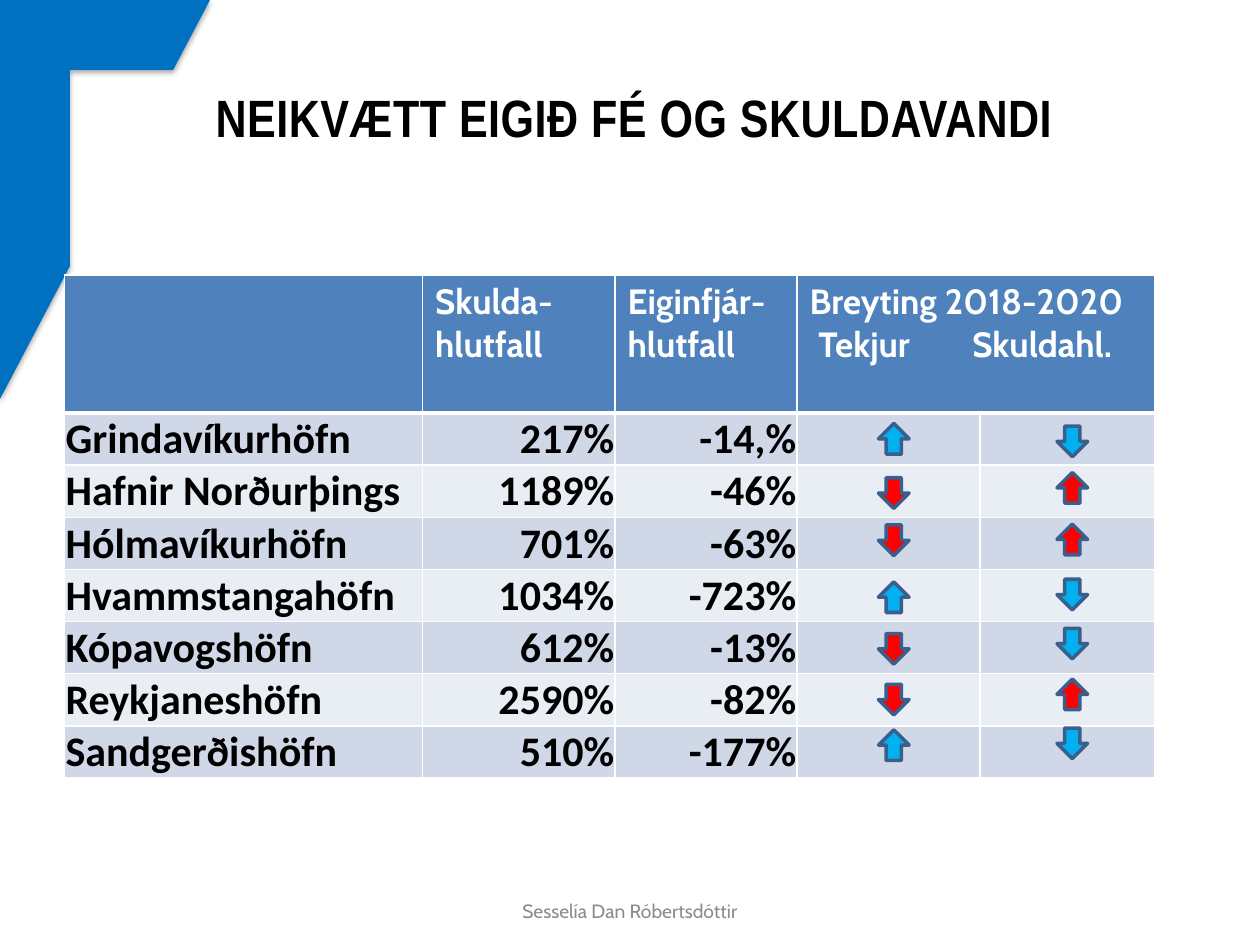
"""Build the slide on harbours with negative equity and debt problems."""
from lxml import etree
from pptx import Presentation
from pptx.dml.color import RGBColor
from pptx.enum import shapes, text
from pptx.oxml import ns
from pptx.util import Pt

TITLE = "NEIKVÆTT EIGIÐ FÉ OG SKULDAVANDI"
AUTHOR = "Sesselía Dan Róbertsdóttir"
HEADINGS = ["", "Skulda-hlutfall", "Eiginfjár-\nhlutfall",
            "Breyting 2018-2020\n\tTekjur\tSkuldahl.", ""]
HARBOURS = [
    ("Grindavíkurhöfn", "217%", "-14,%", ("up", 242), ("down", 243.5)),
    ("Hafnir Norðurþings", "1189%", "-46%", ("down", 273), ("up", 270)),
    ("Hólmavíkurhöfn", "701%", "-63%", ("down", 300), ("up", 299.5)),
    ("Hvammstangahöfn", "1034%", "-723%", ("up", 332.5), ("down", 331)),
    ("Kópavogshöfn", "612%", "-13%", ("down", 362), ("down", 359)),
    ("Reykjaneshöfn", "2590%", "-82%", ("down", 391), ("up", 388)),
    ("Sandgerðishöfn", "510%", "-177%", ("up", 417), ("down", 416)),
]
GOOD_DIRECTIONS = ["up", "down"]
ARROW_LEFTS = [502, 604]
ARROW_SIZE = 17.5
ARROWS = {"up": shapes.MSO_SHAPE.UP_ARROW, "down": shapes.MSO_SHAPE.DOWN_ARROW}
COLUMN_WIDTHS = [204.5, 110, 104, 104.5, 100]
HEADER_HEIGHT, ROW_HEIGHT = 79, 29.75
BANDS = ["D0D8E8", "E9EDF4"]


def rgb(code):
    return RGBColor.from_string(code)


def add_xml(parent, markup):
    parent.append(etree.fromstring(markup.replace(" ", f" {ns.nsdecls('a')} ", 1)))


def set_font(paragraph, name, size, color, bold=False):
    font = paragraph.font
    font.name, font.size, font.bold = name, Pt(size), bold
    font.color.rgb = rgb(color)


def paint(shape, color):
    shape.fill.solid()
    shape.fill.fore_color.rgb = rgb(color)


def style_cell(cell, color, top=1, bottom=1):
    borders = {"lnL": 1, "lnR": 1, "lnT": top, "lnB": bottom}
    for side, width in borders.items():
        add_xml(cell._tc.get_or_add_tcPr(),
                f'<a:{side} w="{Pt(width)}"><a:solidFill><a:srgbClr val="FFFFFF"/>'
                f'</a:solidFill></a:{side}>')
    paint(cell, color)


def add_corner(slide):
    corner = slide.shapes.add_shape(shapes.MSO_SHAPE.HALF_FRAME, 0, 0, Pt(120), Pt(228))
    paint(corner, "0070C0")
    corner.line.fill.background()
    add_xml(corner._element.spPr,
            f'<a:effectLst ><a:outerShdw blurRad="{Pt(3.1)}" dist="{Pt(1.8)}" dir="5400000" '
            'rotWithShape="0"><a:srgbClr val="000000"><a:alpha val="35000"/></a:srgbClr>'
            '</a:outerShdw></a:effectLst>')


def place_title(slide):
    title = slide.shapes.title
    title.left, title.top, title.width, title.height = Pt(116), Pt(21.5), Pt(581), Pt(90)
    frame = title.text_frame
    frame.text = TITLE
    frame.auto_size = text.MSO_AUTO_SIZE.NONE
    frame.vertical_anchor = text.MSO_ANCHOR.MIDDLE
    heading = frame.paragraphs[0]
    heading.alignment = text.PP_ALIGN.LEFT
    set_font(heading, "Arial Narrow", 30, "000000", True)
    heading.runs[0].font._element.set("spc", "30")


def add_harbour_table(slide):
    table = slide.shapes.add_table(
        len(HARBOURS) + 1, len(COLUMN_WIDTHS), Pt(37), Pt(157), Pt(sum(COLUMN_WIDTHS)),
        Pt(HEADER_HEIGHT + ROW_HEIGHT * len(HARBOURS))).table
    for column, width in zip(table.columns, COLUMN_WIDTHS):
        column.width = Pt(width)
    for row in table.rows:
        row.height = Pt(ROW_HEIGHT)
    table.rows[0].height = Pt(HEADER_HEIGHT)
    table.cell(0, 3).merge(table.cell(0, 4))

    for cell, heading in zip(table.rows[0].cells, HEADINGS):
        cell.text = heading
        style_cell(cell, "4F81BD", bottom=3)
        for paragraph in cell.text_frame.paragraphs:
            if "\t" in paragraph.text:
                add_xml(paragraph._p.get_or_add_pPr(),
                        f'<a:tabLst ><a:tab pos="{Pt(5)}" algn="l"/>'
                        f'<a:tab pos="{Pt(93)}" algn="l"/></a:tabLst>')
            set_font(paragraph, "Cabin", 20, "FFFFFF", True)

    for number, (name, debt, equity, *_) in enumerate(HARBOURS, 1):
        for column, value in enumerate([name, debt, equity, "", ""]):
            cell = table.cell(number, column)
            cell.text = value
            style_cell(cell, BANDS[(number - 1) % 2], top=3 if number == 1 else 1)
            cell.margin_left = cell.margin_right = cell.margin_top = Pt(0.5)
            cell.margin_bottom = 0
            cell.vertical_anchor = text.MSO_ANCHOR.BOTTOM
            paragraph = cell.text_frame.paragraphs[0]
            paragraph.alignment = text.PP_ALIGN.RIGHT if column else text.PP_ALIGN.LEFT
            set_font(paragraph, "Calibri", 24, "000000", True)


def add_arrows(slide):
    for *_, income, debt_ratio in HARBOURS:
        changes = zip((income, debt_ratio), ARROW_LEFTS, GOOD_DIRECTIONS)
        for (direction, top), left, good in changes:
            arrow = slide.shapes.add_shape(ARROWS[direction], Pt(left), Pt(top),
                                           Pt(ARROW_SIZE), Pt(ARROW_SIZE))
            arrow.shadow.inherit = False
            paint(arrow, "00B0F0" if direction == good else "FF0000")
            arrow.line.color.rgb = rgb("3A5F8C")
            arrow.line.width = Pt(2)


def add_author(slide):
    frame = slide.shapes.add_textbox(Pt(246), Pt(509), Pt(228), Pt(23)).text_frame
    frame.word_wrap = True
    frame.vertical_anchor = text.MSO_ANCHOR.MIDDLE
    frame.text = AUTHOR
    frame.paragraphs[0].alignment = text.PP_ALIGN.CENTER
    set_font(frame.paragraphs[0], "Cabin", 11, "8C8C8C")


def main():
    deck = Presentation()
    deck.slide_width, deck.slide_height = Pt(720), Pt(540)
    slide = deck.slides.add_slide(deck.slide_layouts.get_by_name("Title Only"))
    add_corner(slide)
    place_title(slide)
    add_harbour_table(slide)
    add_arrows(slide)
    add_author(slide)
    deck.save("out.pptx")


if __name__ == "__main__":
    main()
